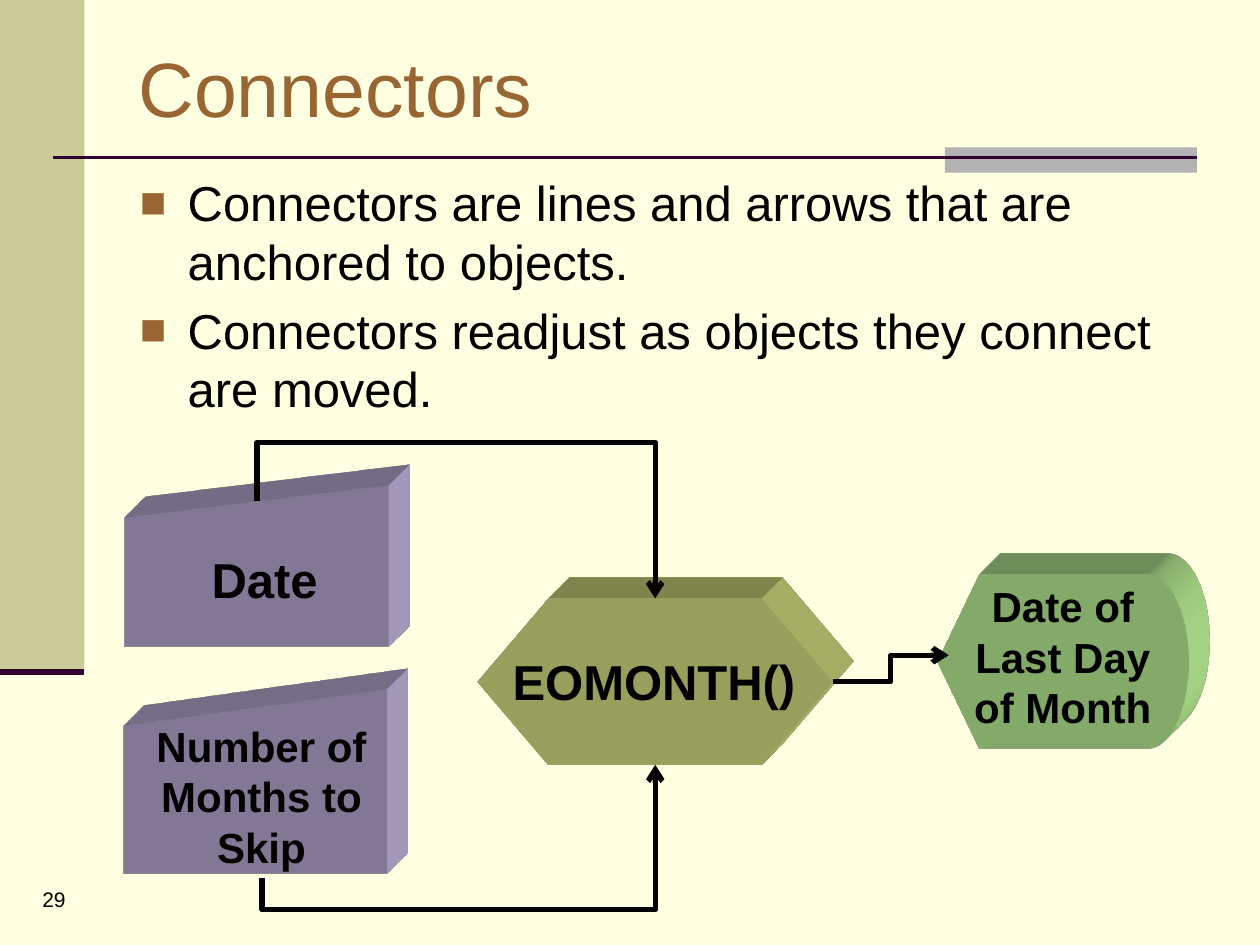
"""Build a slide that explains connectors with a small flow chart."""
from dataclasses import dataclass
from typing import Optional

from lxml.etree import SubElement
from pptx import Presentation
from pptx.dml.color import RGBColor
from pptx.enum.shapes import MSO_CONNECTOR as Connector, MSO_SHAPE as Shape
from pptx.enum.text import MSO_ANCHOR as Anchor, MSO_AUTO_SIZE as AutoSize, PP_ALIGN as Align
from pptx.oxml import parse_xml
from pptx.oxml.ns import nsdecls, qn
from pptx.util import Inches, Pt


@dataclass(frozen=True)
class Theme:
    """Colours, font and type sizes of the slide."""
    font: str = "Arial"
    background: str = "FFFFE1"
    band: str = "CCCC99"
    tab: str = "B2B2B2"
    rule: str = "330033"
    accent: str = "996633"
    text: str = "000000"
    purple: str = "BAACD4"
    olive: str = "D9E284"
    green: str = "BCF298"
    title_size: int = 44
    body_size: int = 28
    label_size: int = 24
    number_size: int = 12


@dataclass(frozen=True)
class Box:
    """A rectangle in inches."""
    left: float
    top: float
    width: float
    height: float

    def lengths(self) -> tuple:
        """Return the four lengths for python-pptx."""
        return tuple(Inches(n) for n in (self.left, self.top, self.width, self.height))


@dataclass(frozen=True)
class Node:
    """A solid flow chart symbol with its label."""
    preset: Shape
    box: Box
    color: str
    label: str
    label_box: Box
    size: int


@dataclass(frozen=True)
class Elbow:
    """An arrow with two bends, with a rail height when it runs vertically."""
    begin: tuple
    end: tuple
    rail: Optional[float] = None


THEME = Theme()
BULLETS = (
    "Connectors are lines and arrows that are anchored to objects.",
    "Connectors readjust as objects they connect are moved.",
)
NODES = (
    Node(Shape.FLOWCHART_MANUAL_INPUT, Box(0.98, 5.47, 2.09, 1.46), THEME.purple,
         "Number of Months to Skip", Box(1, 5.67, 2.15, 1.3), THEME.label_size),
    Node(Shape.FLOWCHART_MANUAL_INPUT, Box(0.99, 3.85, 2.09, 1.28), THEME.purple,
         "Date", Box(1.25, 4.31, 1.7, 0.57), THEME.body_size),
    Node(Shape.FLOWCHART_PREPARATION, Box(3.79, 4.75, 2.82, 1.32), THEME.olive,
         "EOMONTH()", Box(3.93, 5.12, 2.52, 0.57), THEME.body_size),
    Node(Shape.FLOWCHART_DISPLAY, Box(7.44, 4.56, 1.99, 1.38), THEME.green,
         "Date of Last Day of Month", Box(7.53, 4.56, 1.81, 1.3), THEME.label_size),
)
ELBOWS = (
    Elbow((2.04, 3.98), (5.2, 4.75), rail=3.51),
    Elbow((2.08, 6.97), (5.2, 6.07), rail=7.22),
    Elbow((6.61, 5.41), (7.53, 5.2)),
)


def style_text(text_frame, size: int, color: str, align: Align, bold: bool = False) -> None:
    """Format all paragraphs and runs of a text frame."""
    for paragraph in text_frame.paragraphs:
        paragraph.alignment = align
        for run in paragraph.runs:
            run.font.name = THEME.font
            run.font.size = Pt(size)
            run.font.bold = bold
            run.font.color.rgb = RGBColor.from_string(color)


def place(shape, box: Box) -> None:
    """Move and size a shape."""
    shape.left, shape.top, shape.width, shape.height = box.lengths()


def add_block(shapes, preset: Shape, box: Box, color: str):
    """Add a filled shape without outline or shadow."""
    shape = shapes.add_shape(preset, *box.lengths())
    shape.shadow.inherit = False
    shape.fill.solid()
    shape.fill.fore_color.rgb = RGBColor.from_string(color)
    shape.line.fill.background()
    return shape


def add_label(shapes, text: str, box: Box, size: int, align: Align, bold: bool = False) -> None:
    """Add a wrapping text box."""
    text_frame = shapes.add_textbox(*box.lengths()).text_frame
    text_frame.word_wrap = True
    text_frame.auto_size = AutoSize.NONE
    text_frame.text = text
    style_text(text_frame, size, THEME.text, align, bold)


def add_line(shapes, kind: Connector, begin: tuple, end: tuple, color: str, width: float):
    """Add a connector without shadow."""
    points = (Inches(n) for n in (*begin, *end))
    line = shapes.add_connector(kind, *points)
    line.line.color.rgb = RGBColor.from_string(color)
    line.line.width = Pt(width)
    SubElement(line._element.spPr, qn("a:effectLst"))
    return line


def extrude(shape, color: str) -> None:
    """Give a shape depth towards the top right."""
    scene = (f'<a:scene3d {nsdecls("a")}><a:camera prst="legacyObliqueTopRight"/>'
             '<a:lightRig rig="legacyFlat3" dir="b"/></a:scene3d>')
    solid = (f'<a:sp3d {nsdecls("a")} extrusionH="430200" prstMaterial="legacyMatte">'
             '<a:bevelT w="13500" h="13500" prst="angle"/>'
             '<a:bevelB w="13500" h="13500" prst="angle"/>'
             f'<a:extrusionClr><a:srgbClr val="{color}"/></a:extrusionClr></a:sp3d>')
    for xml in (scene, solid):
        shape._element.spPr.append(parse_xml(xml))


def add_node(shapes, node: Node) -> None:
    """Add a symbol and its label as one group."""
    group = shapes.add_group_shape()
    extrude(add_block(group.shapes, node.preset, node.box, node.color), node.color)
    add_label(group.shapes, node.label, node.label_box, node.size, Align.CENTER, bold=True)


def add_elbow(shapes, elbow: Elbow) -> None:
    """Add a bent arrow, turned by 90 degrees when it has a rail."""
    begin, end = elbow.begin, elbow.end
    if elbow.rail is not None:
        middle_x, middle_y = (begin[0] + end[0]) / 2, (begin[1] + end[1]) / 2
        half_x, half_y = (end[0] - begin[0]) / 2, (end[1] - begin[1]) / 2
        begin = (middle_x - half_y, middle_y + half_x)
        end = (middle_x + half_y, middle_y - half_x)
    line = add_line(shapes, Connector.ELBOW, begin, end, THEME.text, 3)
    properties = line._element.spPr
    SubElement(properties.find(qn("a:ln")), qn("a:tailEnd"), type="arrow")
    if elbow.rail is not None:
        properties.find(qn("a:xfrm")).set("rot", str(90 * 60000))
        bend = (elbow.rail - elbow.begin[1]) / (elbow.end[1] - elbow.begin[1])
        adjustments = properties.find(qn("a:prstGeom")).get_or_add_avLst()
        SubElement(adjustments, qn("a:gd"), name="adj1", fmla=f"val {round(bend * 100000)}")


def add_bullet(paragraph) -> None:
    """Give a paragraph a square bullet and a hanging indent."""
    paragraph.space_before = Pt(5.6)
    properties = paragraph._p.get_or_add_pPr()
    properties.set("marL", str(Inches(0.38)))
    properties.set("indent", str(Inches(-0.38)))
    SubElement(SubElement(properties, qn("a:buClr")), qn("a:srgbClr"), val=THEME.accent)
    SubElement(properties, qn("a:buSzPct"), val="90000")
    SubElement(properties, qn("a:buFont"), typeface=THEME.font)
    SubElement(properties, qn("a:buChar"), char="■")


def fill_placeholders(slide) -> None:
    """Write the title and the bullet list."""
    title, body = slide.shapes.title, slide.placeholders[1]
    place(title, Box(1, 0.3, 8.5, 0.78))
    title.text_frame.text = "Connectors"
    title.text_frame.vertical_anchor = Anchor.MIDDLE
    style_text(title.text_frame, THEME.title_size, THEME.accent, Align.LEFT)
    place(body, Box(1.01, 1.32, 8.5, 1.99))
    body.text_frame.text = "\n".join(BULLETS)
    style_text(body.text_frame, THEME.body_size, THEME.text, Align.LEFT)
    for paragraph in body.text_frame.paragraphs:
        add_bullet(paragraph)
    for text_frame in (title.text_frame, body.text_frame):
        text_frame.auto_size = AutoSize.NONE


def main() -> None:
    """Build and save the presentation."""
    presentation = Presentation()
    presentation.slide_width, presentation.slide_height = Inches(10), Inches(7.5)
    slide = presentation.slides.add_slide(presentation.slide_layouts[1])
    slide.background.fill.solid()
    slide.background.fill.fore_color.rgb = RGBColor.from_string(THEME.background)
    shapes = slide.shapes
    add_block(shapes, Shape.RECTANGLE, Box(0, 0, 0.67, 5.33), THEME.band)
    add_block(shapes, Shape.RECTANGLE, Box(7.5, 1.17, 2, 0.2), THEME.tab)
    add_line(shapes, Connector.STRAIGHT, (0.42, 1.25), (9.5, 1.25), THEME.rule, 1.5)
    add_line(shapes, Connector.STRAIGHT, (0, 5.33), (0.67, 5.33), THEME.rule, 3.5)
    add_label(shapes, "29", Box(0.15, 6.99, 0.47, 0.33), THEME.number_size, Align.RIGHT)
    fill_placeholders(slide)
    for node in NODES:
        add_node(shapes, node)
    for elbow in ELBOWS:
        add_elbow(shapes, elbow)
    presentation.save("out.pptx")


if __name__ == "__main__":
    main()
